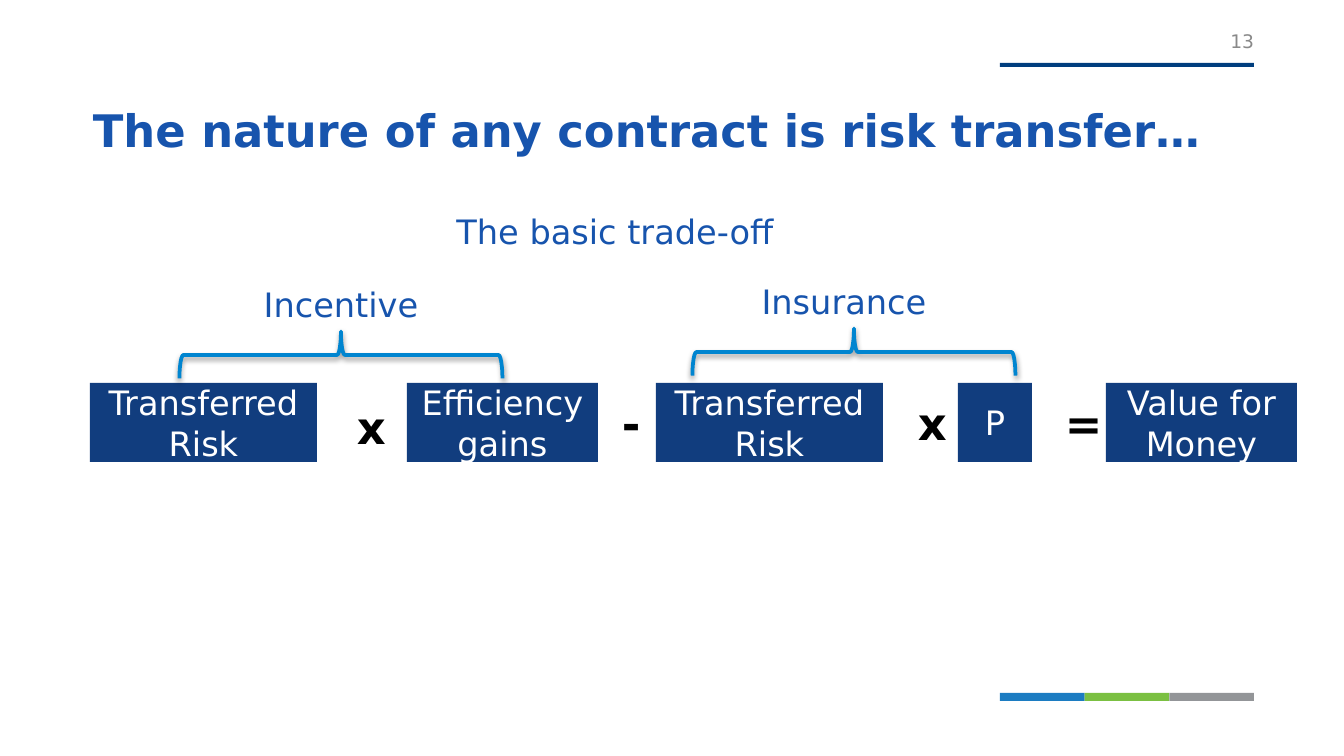
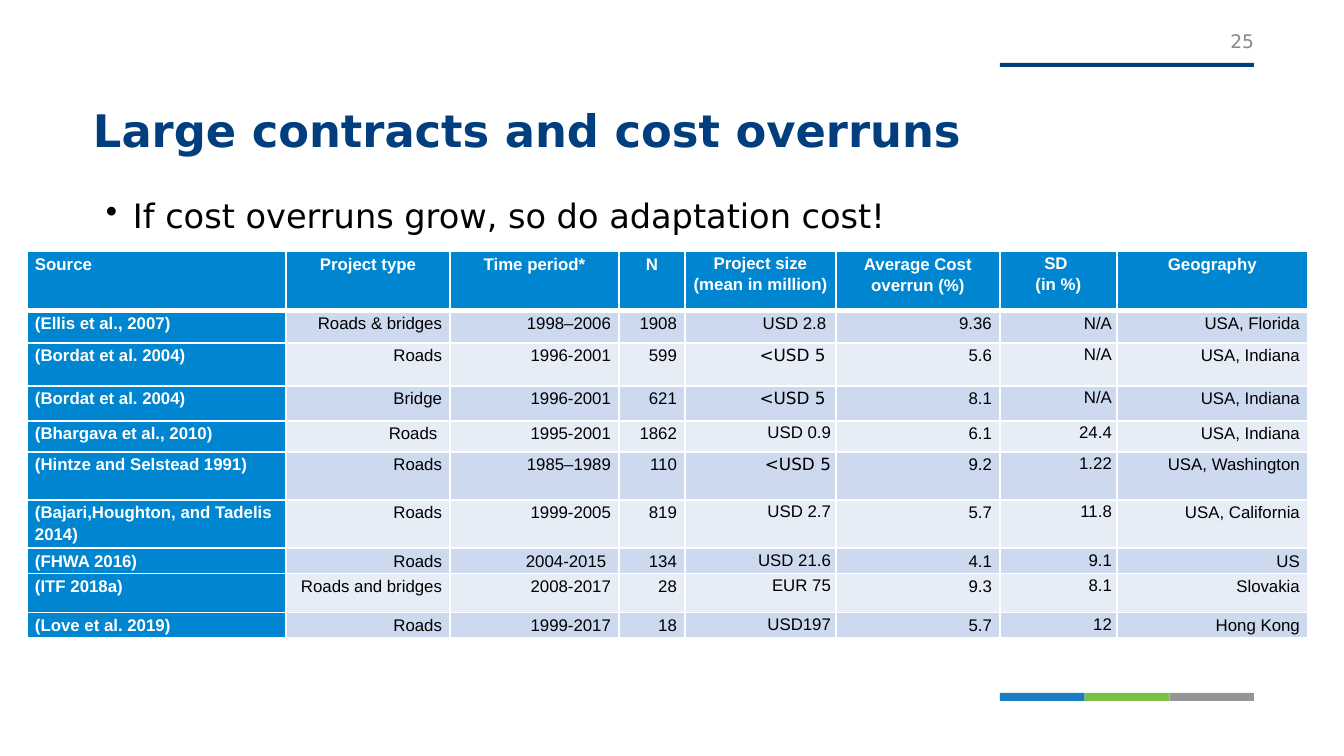
from lxml import etree
from pptx import Presentation
from pptx.dml.color import RGBColor
from pptx.enum.shapes import MSO_SHAPE as SHAPE
from pptx.enum.text import MSO_ANCHOR as ANCHOR, PP_ALIGN as ALIGN
from pptx.oxml import parse_xml
from pptx.oxml.ns import nsdecls, qn
from pptx.util import Emu, Pt

# Content: slide 1
TRADE_OFF = {
    "number": "13",
    "title": "The nature of any contract is risk transfer…",
    "title_color": "1754AD",
}
TERMS = [  # text, left, width
    ("Transferred Risk", 90, 227),
    ("Efficiency gains", 407, 191),
    ("Transferred Risk", 656, 227),
    ("P", 958, 74),
    ("Value for Money", 1106, 191),
]
OPERATORS = [("x", 344, 415), ("-", 609, 411), ("x", 905, 411), ("=", 1052, 411)]
LABELS = [  # text, left, top, width
    ("Incentive", 89, 277, 504),
    ("Insurance", 656, 274, 376),
    ("The basic trade-off", 363, 204, 504),
]
BRACE_CENTERS = [(341, 355), (854, 352)]

# Content: slide 2
OVERRUNS = {
    "number": "25",
    "title": "Large contracts and cost overruns",
    "title_color": "003E7E",
}
BULLET = "If cost overruns grow, so do adaptation cost!"
HEADER = ["Source", "Project type", "Time period*", "N", "Project size (mean in million)",
          "Average Cost overrun (%)", "SD \n(in %)", "Geography"]
STUDIES = [
    ["(Ellis et al., 2007)", "Roads & bridges", "1998–2006", "1908", "USD 2.8 ", "9.36", "N/A", "USA, Florida"],
    ["(Bordat et al. 2004)", "Roads", "1996-2001", "599", "<USD 5 ", "5.6", "N/A", "USA, Indiana"],
    ["(Bordat et al. 2004)", "Bridge", "1996-2001", "621", "<USD 5 ", "8.1", "N/A", "USA, Indiana"],
    ["(Bhargava et al., 2010)", "Roads ", "1995-2001", "1862", "USD 0.9", "6.1", "24.4", "USA, Indiana"],
    ["(Hintze and Selstead 1991)", "Roads", "1985–1989", "110", "<USD 5", "9.2", "1.22", "USA, Washington"],
    ["(Bajari,Houghton, and Tadelis 2014)", "Roads", "1999-2005", "819", "USD 2.7", "5.7", "11.8",
     "USA, California"],
    ["(FHWA 2016)", "Roads", "2004-2015 ", "134", "USD 21.6", "4.1", "9.1", "US"],
    ["(ITF 2018a)", "Roads and bridges", "2008-2017", "28", "EUR 75", "9.3", "8.1", "Slovakia"],
    ["(Love et al. 2019)", "Roads", "1999-2017", "18", "USD197", "5.7", "12", "Hong Kong"],
]
COLUMN_WIDTHS = [259, 164, 169, 66, 151, 164, 117, 191]
ROW_HEIGHTS = [60, 32, 43, 35, 31, 48, 39, 22, 39, 22]
TIGHT_COLUMNS = (4, 6)

# Shared style
SANS, ARIAL = "DejaVu Sans", "Arial"
WHITE, BLACK, GRAY = "FFFFFF", "000000", "898989"
NAVY, BLOCK, ACCENT, LABEL = "003E7E", "113D7E", "0085D0", "1754AD"
BANDS = ["CCD9EE", "E7EDF7"]
FOOTER = ["1C7CC2", "7BC042", "939598"]
RULE_LEFT, RULE_WIDTH = 1000, 254
INSETS = (13, 7, 13, 7)


def px(length):
    return Emu(round(length * 914400 / 134.4))


def rgb(color):
    return RGBColor.from_string(color)


def write(frame, text, size=18, color=BLACK, font=SANS, bold=False, align=ALIGN.LEFT,
          anchor=ANCHOR.TOP, insets=INSETS, spacing=None, after=None, bullet=None):
    frame.word_wrap = True
    frame.vertical_anchor = anchor
    (frame.margin_left, frame.margin_top,
     frame.margin_right, frame.margin_bottom) = map(px, insets)
    para = frame.paragraphs[0]
    para.alignment = align
    if spacing:
        para.line_spacing = spacing
    if after:
        para.space_after = Pt(after)
    if bullet:
        properties = para._p.get_or_add_pPr()
        properties.set("marL", str(px(40)))
        properties.set("indent", str(-px(27)))
        etree.SubElement(properties, qn("a:buChar")).set("char", bullet)
    for index, line in enumerate(text.split("\n")):
        if index:
            para.add_line_break()
        span = para.add_run()
        span.text = line
        span.font.name, span.font.size, span.font.bold = font, Pt(size), bold
        span.font.color.rgb = rgb(color)


def add_text(page, text, left, top, width, height, **style):
    box = page.shapes.add_textbox(px(left), px(top), px(width), px(height))
    write(box.text_frame, text, **style)


def add_block(page, left, top, width, height, fill):
    block = page.shapes.add_shape(SHAPE.RECTANGLE, px(left), px(top), px(width), px(height))
    block.shadow.inherit = False
    block.fill.solid()
    block.fill.fore_color.rgb = rgb(fill)
    block.line.fill.background()
    return block


def add_brace(page, center_x, center_y, thickness=47, length=323):
    brace = page.shapes.add_shape(SHAPE.RIGHT_BRACE, px(center_x - thickness / 2),
                                  px(center_y - length / 2), px(thickness), px(length))
    brace.rotation = 270
    brace.fill.background()
    brace.line.color.rgb = rgb(ACCENT)
    brace.line.width = Pt(2)
    brace._element.spPr.append(parse_xml(
        f'<a:effectLst {nsdecls("a")}><a:outerShdw blurRad="{Pt(3.1)}" dist="{Pt(1.6)}" '
        f'dir="5400000" rotWithShape="0"><a:srgbClr val="{BLACK}"><a:alpha val="38000"/>'
        '</a:srgbClr></a:outerShdw></a:effectLst>'))


def set_borders(cell, bottom):
    properties = cell._tc.get_or_add_tcPr()
    widths = {"lnL": 1, "lnR": 1, "lnT": 1, "lnB": bottom}
    for index, (side, width) in enumerate(widths.items()):
        properties.insert(index, parse_xml(
            f'<a:{side} {nsdecls("a")} w="{Pt(width)}"><a:solidFill>'
            f'<a:srgbClr val="{WHITE}"/></a:solidFill></a:{side}>'))


def new_page(deck, number, title, title_color):
    page = deck.slides.add_slide(deck.slide_layouts[6])
    add_block(page, RULE_LEFT, 63, RULE_WIDTH, 4, NAVY)
    part = RULE_WIDTH / len(FOOTER)
    for index, color in enumerate(FOOTER):
        add_block(page, RULE_LEFT + index * part, 693, part, 8, color)
    add_text(page, number, 1188, 12, 66, 40, size=10, color=GRAY, align=ALIGN.RIGHT,
             anchor=ANCHOR.BOTTOM, insets=(0, 0, 0, 0))
    add_text(page, title, 93, 101, 1162, 67, size=24, color=title_color, bold=True,
             anchor=ANCHOR.BOTTOM, insets=(0, 0, 0, 11))
    return page


def build_trade_off(deck):
    page = new_page(deck, **TRADE_OFF)
    for text, left, width in TERMS:
        block = add_block(page, left, 383, width, 79, BLOCK)
        write(block.text_frame, text, color=WHITE, align=ALIGN.CENTER, anchor=ANCHOR.MIDDLE)
    for text, left, top in OPERATORS:
        add_text(page, text, left, top, 38, 24, size=24, bold=True,
                 align=ALIGN.CENTER, anchor=ANCHOR.MIDDLE)
    for text, left, top, width in LABELS:
        add_text(page, text, left, top, width, 54, color=LABEL, align=ALIGN.CENTER)
    for center in BRACE_CENTERS:
        add_brace(page, *center)


def build_overruns(deck):
    page = new_page(deck, **OVERRUNS)
    rows = [HEADER] + STUDIES
    table = page.shapes.add_table(len(rows), len(HEADER), px(27), px(251),
                                  px(sum(COLUMN_WIDTHS)), px(sum(ROW_HEIGHTS))).table
    for column, width in zip(table.columns, COLUMN_WIDTHS):
        column.width = px(width)
    for row, height in zip(table.rows, ROW_HEIGHTS):
        row.height = px(height)
    for r, texts in enumerate(rows):
        for c, text in enumerate(texts):
            cell = table.cell(r, c)
            heading = r == 0 or c == 0
            cell.fill.solid()
            cell.fill.fore_color.rgb = rgb(ACCENT if heading else BANDS[(r - 1) % 2])
            set_borders(cell, bottom=3 if r == 0 else 1)
            align = ALIGN.LEFT if c == 0 else ALIGN.CENTER if r == 0 else ALIGN.RIGHT
            insets = (5, 0, 5, 0) if c in TIGHT_COLUMNS else (8, 1, 8, 1)
            write(cell.text_frame, text, size=9, color=WHITE if heading else BLACK,
                  font=SANS if text.startswith("<") else ARIAL, bold=heading, align=align,
                  insets=insets, spacing=1.15, after=6 if r else 10)
            # Cell margins live on the cell itself
            (cell.margin_left, cell.margin_top,
             cell.margin_right, cell.margin_bottom) = map(px, insets)
    add_text(page, BULLET, 93, 176, 1162, 504, insets=(0, 11, 0, 0), spacing=1.2, bullet="•")


def main():
    deck = Presentation()
    deck.slide_width, deck.slide_height = px(1344), px(756)
    build_trade_off(deck)
    build_overruns(deck)
    deck.save("out.pptx")


if __name__ == "__main__":
    main()
